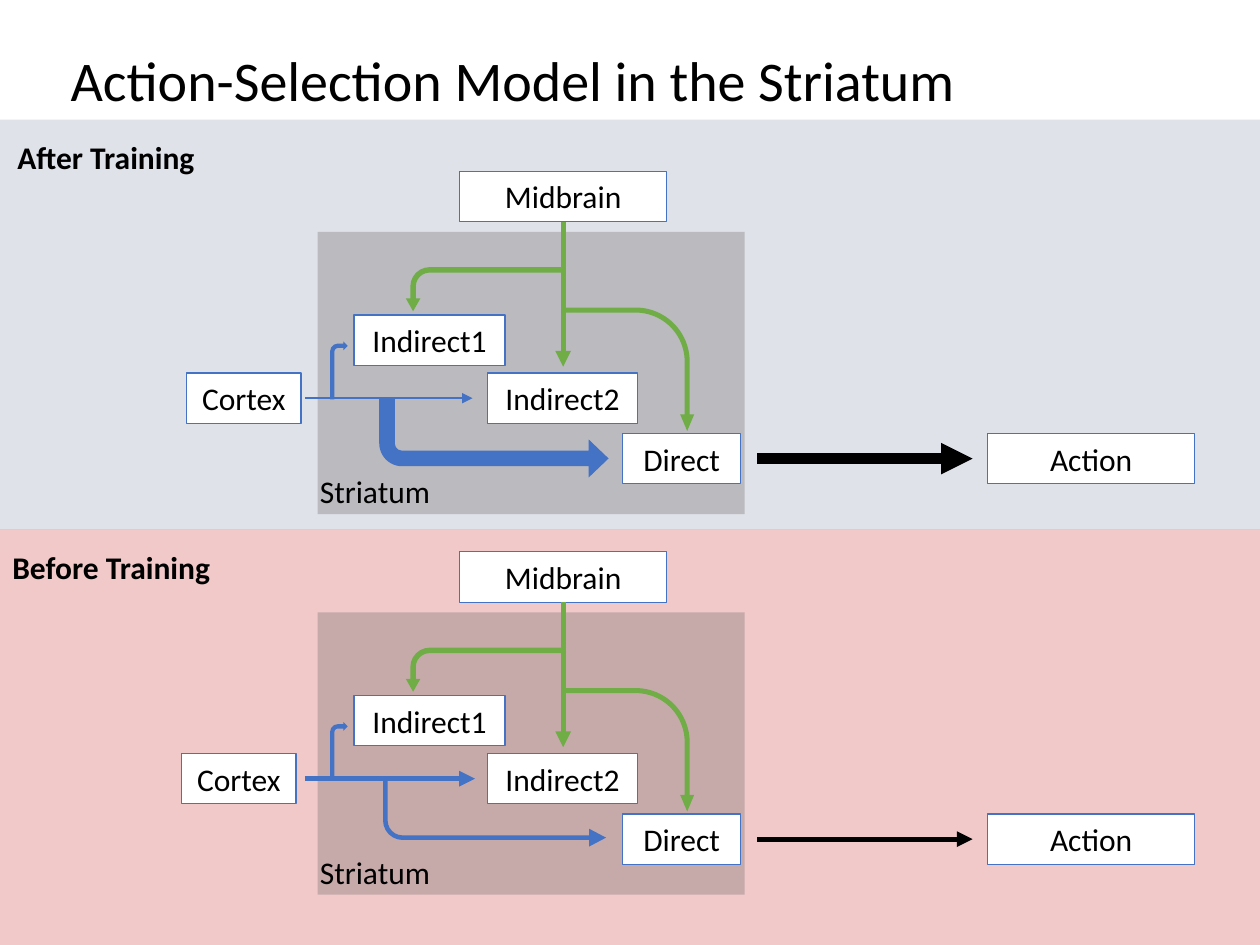
from lxml import etree
from pptx import Presentation
from pptx.dml.color import RGBColor
from pptx.enum.shapes import MSO_CONNECTOR, MSO_SHAPE
from pptx.enum.text import MSO_ANCHOR, PP_ALIGN
from pptx.oxml.ns import qn
from pptx.util import Inches, Pt

RECTANGLE, BENT_ARROW = MSO_SHAPE.RECTANGLE, MSO_SHAPE.BENT_ARROW
STRAIGHT = MSO_CONNECTOR.STRAIGHT
LEFT, CENTER = PP_ALIGN.LEFT, PP_ALIGN.CENTER
TOP = MSO_ANCHOR.TOP
WHITE, BLACK, BLUE, GREEN, GRAY = "FFFFFF", "000000", "4472C4", "70AD47", "767171"
TITLE_ONLY = 5
PANEL_STEP = 3.02


def add_part(shapes, kind, at, fill, opacity=100):
    part = shapes.add_shape(kind, *[Inches(value) for value in at])
    part.shadow.inherit = False
    part.fill.solid()
    part.fill.fore_color.rgb = RGBColor.from_string(fill)
    part.line.fill.background()
    if opacity < 100:
        color = part.fill._xPr.find(qn("a:solidFill"))[0]
        etree.SubElement(color, qn("a:alpha"), val=str(opacity * 1000))
    return part


def set_text(shape, text, size=18, bold=False, align=LEFT):
    frame = shape.text_frame
    frame.text = text
    frame.word_wrap = True
    frame.vertical_anchor = TOP
    para = frame.paragraphs[0]
    para.alignment = align
    font = para.runs[0].font
    font.name, font.size, font.bold = "Calibri", Pt(size), bold
    font.color.rgb = RGBColor.from_string(BLACK)


deck = Presentation()
deck.slide_width, deck.slide_height = Inches(10), Inches(7.5)
page = deck.slides.add_slide(deck.slide_layouts[TITLE_ONLY])

# Title
title = page.shapes.title
title.left, title.top = Inches(0.46), Inches(0.31)
title.width, title.height = Inches(7.64), Inches(0.64)
set_text(title, "Action-Selection Model in the Striatum", size=32)

# Background bands
add_part(page.shapes, RECTANGLE, (0, 0.95, 10, 3.25), "203864", 14)
add_part(page.shapes, RECTANGLE, (0, 4.2, 10, 3.3), "C00000", 21)

# What differs between the panels: heading, Cortex box, line weights, direct pathway
panels = [
    dict(heading="After Training", heading_at=(0.04, 1.05), cortex_left=1.48,
         action_weight=6, cortex_weight=1.5, cortex_end=3.75,
         direct_at=(3.01, 3.16, 1.82, 0.63), direct_adjust=(0.196, 0.239, 0.25, 0.288)),
    dict(heading="Before Training", heading_at=(0, 4.3), cortex_left=1.44,
         action_weight=3, cortex_weight=3, cortex_end=3.77,
         direct_at=(3.04, 3.16, 1.77, 0.54), direct_adjust=(0.068, 0.132, 0.25, 0.288)),
]

for index, panel in enumerate(panels):
    shift = index * PANEL_STEP

    # Striatum region, with the two circuits grouped on top of it
    add_part(page.shapes, RECTANGLE, (2.52, 1.84 + shift, 3.39, 2.24), GRAY, 35)
    cortex_circuit = page.shapes.add_group_shape().shapes
    midbrain_circuit = page.shapes.add_group_shape().shapes

    # Labelled boxes
    for shapes, name, left, top, width in [
        (page.shapes, "Action", 7.84, 3.44, 1.64),
        (cortex_circuit, "Indirect1", 2.81, 2.5, 1.2),
        (cortex_circuit, "Cortex", panel["cortex_left"], 2.96, 0.91),
        (cortex_circuit, "Indirect2", 3.87, 2.96, 1.19),
        (cortex_circuit, "Direct", 4.94, 3.44, 0.94),
        (midbrain_circuit, "Midbrain", 3.65, 1.36, 1.64),
    ]:
        box = add_part(shapes, RECTANGLE, (left, top + shift, width, 0.4), WHITE)
        box.line.color.rgb = RGBColor.from_string(BLUE)
        box.line.width = Pt(0.75)
        set_text(box, name, align=CENTER)

    # Straight arrows
    for shapes, start_x, start_y, end_x, end_y, color, weight in [
        (page.shapes, 6.01, 3.64, 7.72, 3.64, BLACK, panel["action_weight"]),
        (cortex_circuit, 2.42, 3.16, panel["cortex_end"], 3.16, BLUE, panel["cortex_weight"]),
        (midbrain_circuit, 4.47, 1.76, 4.47, 2.91, GREEN, 3),
    ]:
        arrow = shapes.add_connector(STRAIGHT, Inches(start_x), Inches(start_y + shift),
                                     Inches(end_x), Inches(end_y + shift))
        arrow.line.color.rgb = RGBColor.from_string(color)
        arrow.line.width = Pt(weight)
        etree.SubElement(arrow.line._get_or_add_ln(), qn("a:tailEnd"), type="triangle")
        etree.SubElement(arrow._element.spPr, qn("a:effectLst"))

    # Bent arrows
    for shapes, (left, top, width, height), color, rotation, flips, adjust in [
        (cortex_circuit, (2.62, 2.71, 0.14, 0.46), BLUE, 0, "", ()),
        (cortex_circuit, panel["direct_at"], BLUE, 0, "V", panel["direct_adjust"]),
        (midbrain_circuit, (3.67, 1.67, 0.35, 1.25), GREEN, 270, "H",
         (0.124, 0.166, 0.292, 0.438)),
        (midbrain_circuit, (4.5, 2.41, 0.98, 1.04), GREEN, 270, "HV",
         (0.041, 0.057, 0.134, 0.438)),
    ]:
        bend = add_part(shapes, BENT_ARROW, (left, top + shift, width, height), color)
        bend.rotation = rotation
        for flip in flips:
            bend._element.spPr.find(qn("a:xfrm")).set("flip" + flip, "1")
        for position, value in enumerate(adjust):
            bend.adjustments[position] = value

    # Region name and panel heading
    for text, (left, top), width, bold in [
        ("Striatum", (2.44, 3.7 + shift), 1.19, False),
        (panel["heading"], panel["heading_at"], 1.9, True),
    ]:
        label = page.shapes.add_textbox(Inches(left), Inches(top), Inches(width), Inches(0.4))
        set_text(label, text, bold=bold)

deck.save("out.pptx")
